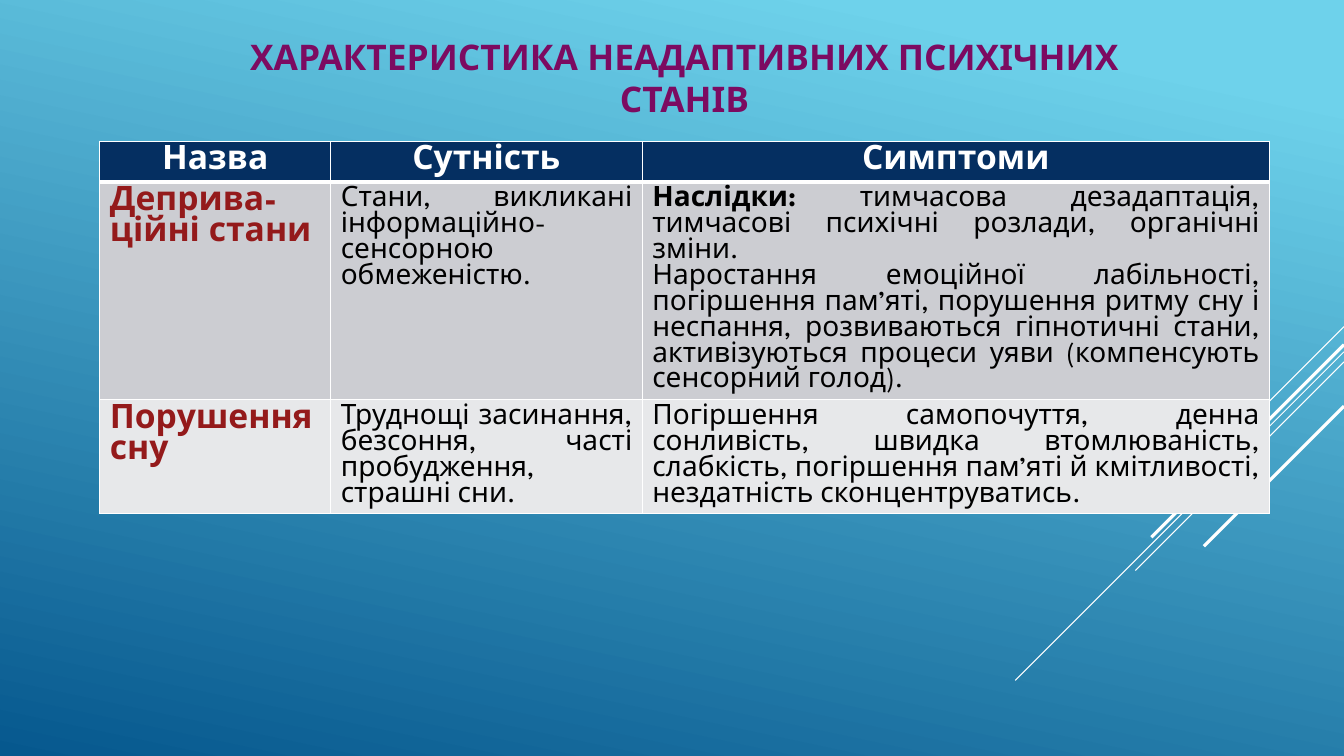
from lxml.etree import SubElement
from pptx import Presentation
from pptx.dml.color import RGBColor
from pptx.enum.shapes import MSO_CONNECTOR
from pptx.enum.text import MSO_ANCHOR, MSO_AUTO_SIZE, PP_ALIGN
from pptx.oxml.ns import qn
from pptx.util import Inches, Pt

FONT = "League Spartan"
WHITE = RGBColor(0xFF, 0xFF, 0xFF)
BLACK = RGBColor(0x00, 0x00, 0x00)
SKY = RGBColor(0x6E, 0xD2, 0xEB)
DEEP = RGBColor(0x06, 0x58, 0x8E)
PURPLE = RGBColor(0x7C, 0x0B, 0x61)
NAVY = RGBColor(0x05, 0x2F, 0x61)
RED = RGBColor(0x94, 0x1A, 0x1B)
BAND_FILLS = [NAVY, RGBColor(0xCC, 0xCD, 0xD2), RGBColor(0xE7, 0xE8, 0xEA)]

TITLE = "ХАРАКТЕРИСТИКА НЕАДАПТИВНИХ ПСИХІЧНИХ СТАНІВ"
TITLE_STYLE = {"size": Pt(25.2), "bold": True, "color": PURPLE}
HEADER_STYLE = {"size": Pt(24), "bold": True, "color": WHITE}
NAME_STYLE = {**HEADER_STYLE, "color": RED}
BODY_STYLE = {"size": Pt(20), "bold": False, "color": BLACK}
LEAD_STYLE = {**BODY_STYLE, "bold": True}

RAYS = [(3.24, 1, 0.75), (3.49, 3.26, 0.75), (3.59, 2.07, 0.75),
        (3.42, 1.91, 2.25), (4.03, 1.39, 2.25)]
COL_WIDTHS = [2.29, 3.09, 6.22]
ROW_HEIGHTS = [0.4, 2.16, 1.12]
HEADERS = ["Назва", "Сутність", "Симптоми"]
STATES = [
    ("Деприва-ційні стани",
     "Стани, викликані інформаційно-сенсорною обмеженістю.",
     [[("Наслідки: ", LEAD_STYLE),
       ("тимчасова дезадаптація, тимчасові психічні розлади, "
        "органічні зміни.", BODY_STYLE)],
      [("Наростання емоційної лабільності, погіршення пам’яті, порушення "
        "ритму сну і неспання, розвиваються гіпнотичні стани, активізуються "
        "процеси уяви (компенсують сенсорний голод).", BODY_STYLE)]]),
    ("Порушення сну",
     "Труднощі засинання, безсоння, часті пробудження, страшні сни.",
     [[("Погіршення самопочуття, денна сонливість, швидка втомлюваність, "
        "слабкість, погіршення пам’яті й кмітливості, нездатність "
        "сконцентруватись.", BODY_STYLE)]]),
]


def set_background(s):
    """Fill the slide with the sky gradient."""
    fill = s.background.fill
    fill.gradient()
    fill.gradient_angle = 258
    for stop, pos, color in zip(fill.gradient_stops, (0.1, 1), (SKY, DEEP)):
        stop.position = pos
        stop.color.rgb = color


def write_text(tf, paragraphs, align):
    """Write paragraphs, each a list of (text, style) runs."""
    for i, runs in enumerate(paragraphs):
        p = tf.add_paragraph() if i else tf.paragraphs[0]
        p.alignment, p.line_spacing = align, 1.0
        for text, style in runs:
            r = p.add_run()
            r.text = text
            r.font.name = FONT
            for key, value in style.items():
                if key == "color":
                    r.font.color.rgb = value
                else:
                    setattr(r.font, key, value)


def add_title(s):
    """Place and format the title placeholder."""
    sp = s.shapes.title
    box = {"left": 1.81, "top": 0.33, "width": 9.96, "height": 0.88}
    for key, value in box.items():
        setattr(sp, key, Inches(value))
    tf = sp.text_frame
    tf.word_wrap = True
    tf.auto_size = MSO_AUTO_SIZE.NONE
    tf.vertical_anchor = MSO_ANCHOR.MIDDLE
    write_text(tf, [[(TITLE, TITLE_STYLE)]], PP_ALIGN.CENTER)


def add_ray(s, top, run, weight):
    """Draw a 45-degree line down from the right edge."""
    right = 13.33
    ray = s.shapes.add_connector(
        MSO_CONNECTOR.STRAIGHT, Inches(right), Inches(top),
        Inches(right - run), Inches(top + run))
    ray.line.color.rgb = WHITE
    ray.line.width = Pt(weight)
    SubElement(ray._element.spPr, qn("a:effectLst"))


def set_borders(cell, widths):
    """Give the cell white borders, with widths in points by side."""
    tc_pr = cell._tc.get_or_add_tcPr()
    for side, width in widths.items():
        ln = SubElement(tc_pr, qn(f"a:ln{side}"), w=str(Pt(width)))
        fill = SubElement(ln, qn("a:solidFill"))
        SubElement(fill, qn("a:srgbClr"), val=str(WHITE))


def fill_cell(cell, row, paragraphs):
    """Write and colour one table cell."""
    align = PP_ALIGN.JUSTIFY if row else PP_ALIGN.CENTER
    write_text(cell.text_frame, paragraphs, align)
    set_borders(cell, {"L": 1, "R": 1, "T": 3 if row == 1 else 1,
                       "B": 1 if row else 3})
    cell.fill.solid()
    cell.fill.fore_color.rgb = BAND_FILLS[row]


def add_states_table(s):
    """Add the table of mental states."""
    rows = [[[[(h, HEADER_STYLE)]] for h in HEADERS]]
    rows += [[[[(name, NAME_STYLE)]], [[(essence, BODY_STYLE)]], symptoms]
             for name, essence, symptoms in STATES]
    table = s.shapes.add_table(
        len(rows), len(HEADERS), Inches(0.99), Inches(1.4),
        Inches(sum(COL_WIDTHS)), Inches(sum(ROW_HEIGHTS))).table
    for col, width in zip(table.columns, COL_WIDTHS):
        col.width = Inches(width)
    for i, (height, row) in enumerate(zip(ROW_HEIGHTS, rows)):
        table.rows[i].height = Inches(height)
        for j, paragraphs in enumerate(row):
            fill_cell(table.cell(i, j), i, paragraphs)


def main():
    """Build the slide and save it."""
    prs = Presentation()
    prs.slide_width, prs.slide_height = Inches(13.33), Inches(7.5)
    s = prs.slides.add_slide(prs.slide_layouts[5])
    set_background(s)
    for ray in RAYS:
        add_ray(s, *ray)
    add_title(s)
    add_states_table(s)
    prs.save("out.pptx")


if __name__ == "__main__":
    main()
